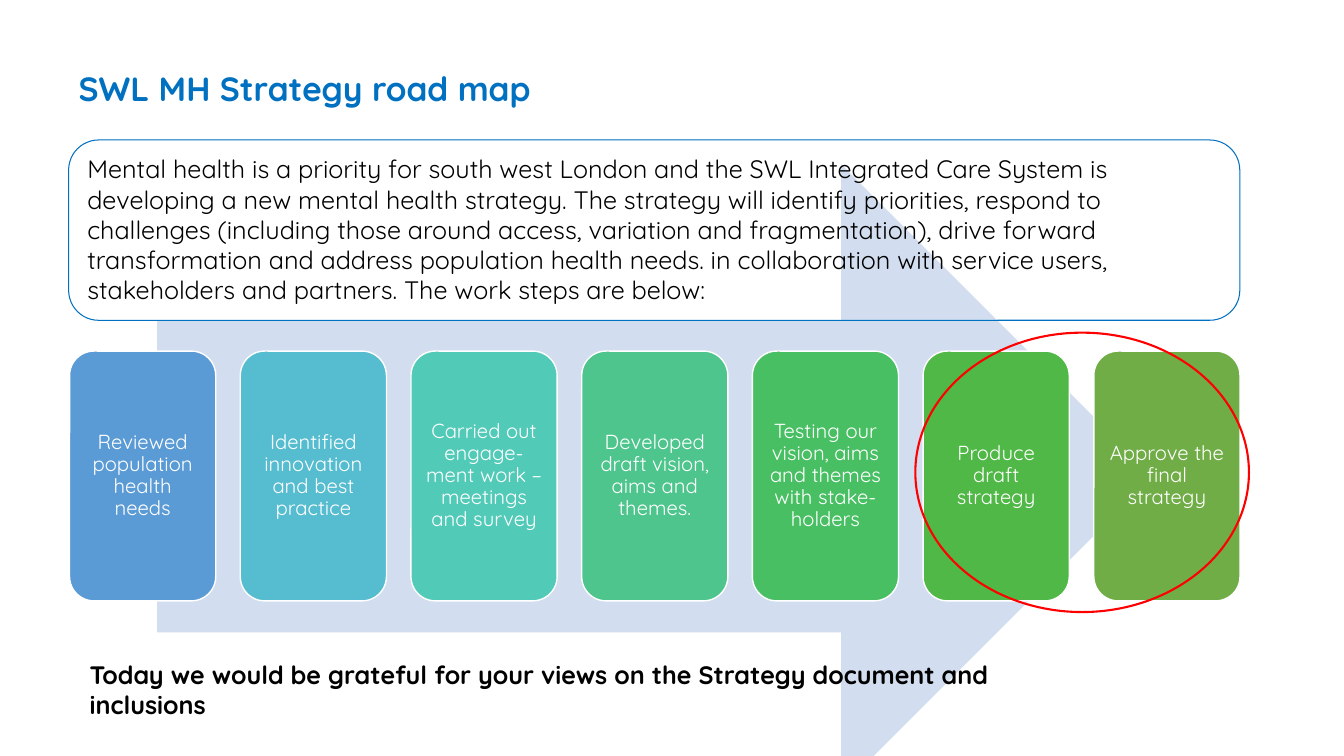
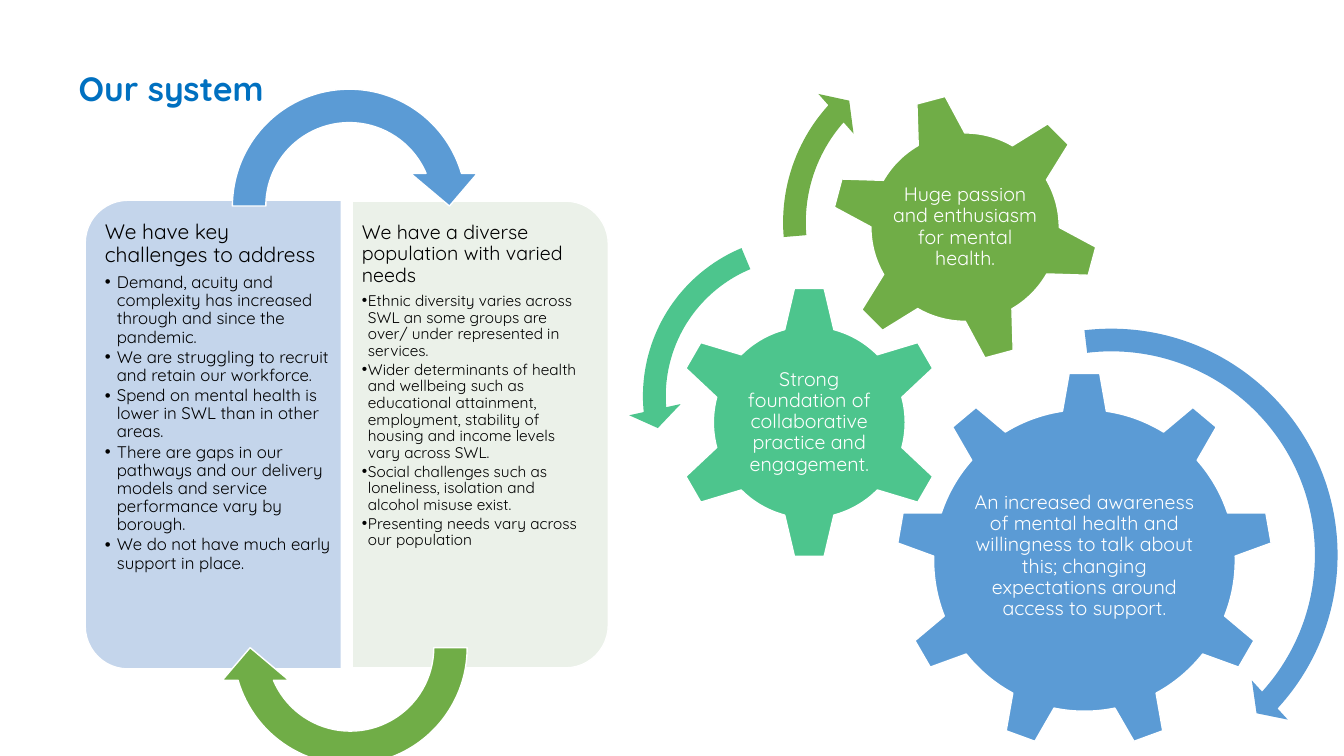
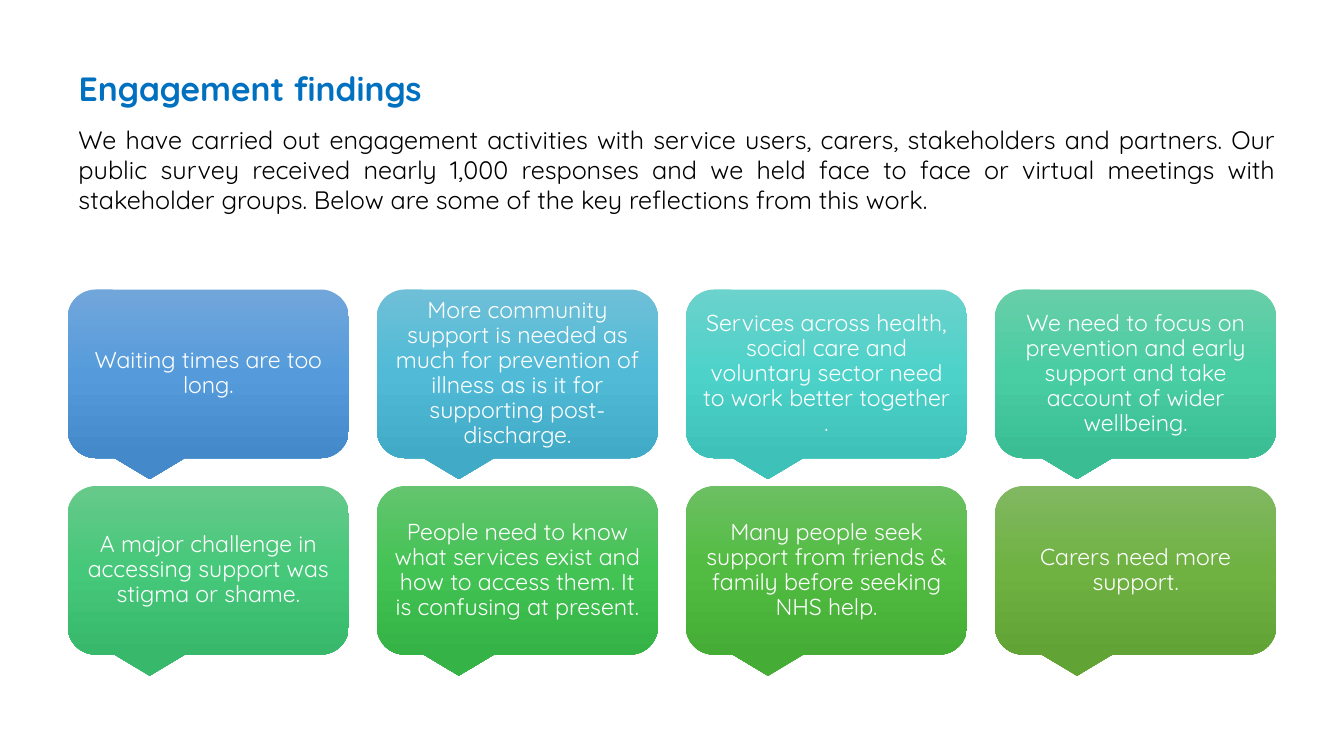
from copy import deepcopy

from lxml.etree import SubElement
from pptx import Presentation
from pptx.dml.color import RGBColor as RGB
from pptx.enum.shapes import MSO_SHAPE as Kind
from pptx.enum.text import MSO_ANCHOR as Anchor, MSO_AUTO_SIZE as Auto, PP_ALIGN as Align
from pptx.oxml.ns import qn
from pptx.util import Pt

FONT = "Quicksand"
BLACK = RGB(0, 0, 0)
WHITE = RGB(255, 255, 255)
RED = RGB(255, 0, 0)
NAVY = RGB(0x00, 0x70, 0xC0)
BLUE = RGB(0x5B, 0x9B, 0xD5)
MINT = RGB(0x4D, 0xC5, 0x8D)
GREEN = RGB(0x70, 0xAD, 0x47)
PALE = RGB(0xD2, 0xDE, 0xEF)
SKY = RGB(0xC4, 0xD5, 0xEB)
SAGE = RGB(0xEB, 0xF1, 0xE9)

STEPS = [
    ("Reviewed population health needs", BLUE),
    ("Identified innovation and best practice", RGB(0x56, 0xBC, 0xD0)),
    ("Carried out engage-ment work – meetings and survey", RGB(0x52, 0xCA, 0xB8)),
    ("Developed draft vision, aims and themes.", MINT),
    ("Testing our vision, aims and themes with stake-holders", RGB(0x49, 0xBF, 0x64)),
    ("Produce draft strategy", RGB(0x50, 0xB8, 0x46)),
    ("Approve the final strategy", GREEN),
]
AIMS = (
    "Mental health is a priority for south west London and the SWL Integrated Care System is "
    "developing a new mental health strategy. The strategy will identify priorities, respond to "
    "challenges (including those around access, variation and fragmentation), drive forward "
    "transformation and address population health needs. in collaboration with service users, "
    "stakeholders and partners. The work steps are below:"
)
ISSUES = [
    "Demand, acuity and complexity has increased through and since the pandemic.",
    "We are struggling to recruit and retain our workforce.",
    "Spend on mental health is lower in SWL than in other areas.",
    "There are gaps in our pathways and our delivery models and service performance vary by borough.",
    "We do not have much early support in place.",
]
NEEDS = [
    "Ethnic diversity varies across SWL an some groups are over/ under represented in services.",
    "Wider determinants of health and wellbeing such as educational attainment, employment, "
    "stability of housing and income levels vary across SWL.",
    "Social challenges such as loneliness, isolation and alcohol misuse exist.",
    "Presenting needs vary across our population",
]
SURVEY = (
    "We have carried out engagement activities with service users, carers, stakeholders and "
    "partners. Our public survey received nearly 1,000 responses and we held face to face or "
    "virtual meetings with stakeholder groups. Below are some of the key reflections from this work."
)
VIEWS = [
    ("Waiting times are too long.", "71A6DB 559BDB 448ACA"),
    ("More community support is needed as much for prevention of illness as is it for "
     "supporting post-discharge.", "6EBFD7 51BBD7 41AAC6"),
    ("Services across health, social care and voluntary sector need to work better together .",
     "6BD2CC 4DD2CA 3DC1B9"),
    ("We need to focus on prevention and early support and take account of wider wellbeing.",
     "68CEAA 49CDA2 3ABD92"),
    ("A major challenge in accessing support was stigma or shame.", "66C98A 46C87A 37B86B"),
    ("People need to know what services exist and how to access them. It is confusing at present.",
     "64C46F 43C354 35B346"),
    ("Many people seek support from friends & family before seeking NHS help.",
     "6CBF62 51BC41 45AC35"),
    ("Carers need more support.", "81B861 6FB242 62A336"),
]


def points(box):
    return [Pt(n) for n in box]


def place(item, box):
    item.left, item.top, item.width, item.height = points(box)


def write(frame, text, size=18, color=BLACK, bold=False, align=Align.LEFT, anchor=Anchor.TOP,
          inset=(7.2, 3.6, 7.2, 3.6), lead=1.0, after=0, mark=None, hang=0):
    frame.word_wrap = True
    frame.auto_size = Auto.NONE
    frame.vertical_anchor = anchor
    (frame.margin_left, frame.margin_top,
     frame.margin_right, frame.margin_bottom) = points(inset)
    para = frame.add_paragraph() if frame.text else frame.paragraphs[0]
    if mark is not None:
        props = para._p.get_or_add_pPr()
        props.set("marL", str(Pt(hang)))
        props.set("indent", str(-Pt(hang)))
        if mark:
            para.level = 1
            SubElement(props, qn("a:buChar")).set("char", mark)
        else:
            SubElement(props, qn("a:buNone"))
    para.alignment = align
    para.line_spacing = lead
    para.space_before = Pt(0)
    para.space_after = Pt(after)
    run = para.add_run()
    run.text = text
    font = run.font
    font.name, font.size, font.bold = FONT, Pt(size), bold
    font.color.rgb = color


def center(frame, text, size, inset):
    write(frame, text, size=size, color=WHITE, align=Align.CENTER, anchor=Anchor.MIDDLE,
          inset=(inset,) * 4, lead=0.9)


def note(slide, box, text, **form):
    write(slide.shapes.add_textbox(*points(box)).text_frame, text, **form)


def draw(slide, kind, box, fill=None, line=None, width=1, turn=0, adjust=()):
    shape = slide.shapes.add_shape(kind, *points(box))
    shape.shadow.inherit = False
    shape.rotation = turn
    for i, value in enumerate(adjust):
        shape.adjustments[i] = value
    if fill is None:
        shape.fill.background()
    else:
        shape.fill.solid()
        shape.fill.fore_color.rgb = fill
    if line is None:
        shape.line.fill.background()
    else:
        shape.line.color.rgb = line
        shape.line.width = Pt(width)
    return shape


def start(deck, layout, title):
    slide = deck.slides.add_slide(deck.slide_layouts[layout])
    head = slide.shapes.title
    place(head, (49, 44.6, 663, 36))
    write(head.text_frame, title, size=24, color=NAVY, bold=True)
    return slide


def cards(slide, box):
    left, top, width, height = box
    wide = 104.4
    step = (width - wide) / (len(STEPS) - 1)
    for i, (text, fill) in enumerate(STEPS):
        card = draw(slide, Kind.ROUNDED_RECTANGLE, (left + i * step, top, wide, height), fill, WHITE)
        center(card.text_frame, text, 14.5, 4.3)


def shade(shape, tones):
    fill = shape.fill
    fill.gradient()
    fill.gradient_angle = 270
    stops = shape.element.spPr.find(".//" + qn("a:gsLst"))
    stops.insert(1, deepcopy(stops[0]))
    for stop, tone, spot in zip(fill.gradient_stops, tones.split(), (0, 0.5, 1)):
        stop.color.rgb = RGB.from_string(tone)
        stop.position = spot


def quotes(slide, box, cols=4, gap=20):
    left, top, width, height = box
    wide = (width - gap * (cols - 1)) / cols
    high = (height - gap) / 2
    for i, (text, tones) in enumerate(VIEWS):
        row, col = divmod(i, cols)
        spot = (left + col * (wide + gap), top + row * (high + gap), wide, high)
        quote = draw(slide, Kind.ROUNDED_RECTANGULAR_CALLOUT, spot)
        shade(quote, tones)
        center(quote.text_frame, text, 16.5, 5)


def panel(slide, body, box, fill, turn, shift, inset, head, items, size, hang):
    left, top, width, height = box
    spot = (left + (width - height) / 2, top + (height - width) / 2, height, width)
    draw(slide, Kind.ROUND_2_SAME_RECTANGLE, spot, fill, WHITE, turn=turn, adjust=(0.167, 0))
    place(body, (left + shift, top + 8.2, 173.5, height - 18))
    body.element.getparent().append(body.element)
    frame = body.text_frame
    write(frame, head, size=size + 3, inset=inset, lead=0.9, after=5, mark="")
    for item in items:
        write(frame, item, size=size, inset=inset, lead=0.9, after=1.5, mark="•", hang=hang)


def gear(slide, kind, left, top, size, fill, text, pad, lift=0, turn=0):
    draw(slide, kind, (left, top, size, size), fill, WHITE, turn=turn)
    side = size - 2 * pad
    box = slide.shapes.add_textbox(*points((left + pad, top + pad - lift, side, side)))
    center(box.text_frame, text, 14, 1.4)


def bend(slide, left, top, size, fill, adjust, kind=Kind.CIRCULAR_ARROW, **form):
    draw(slide, kind, (left, top, size, size), fill, adjust=adjust, **form)


def roadmap(deck):
    slide = start(deck, 5, "SWL MH Strategy road map")
    draw(slide, Kind.RIGHT_ARROW, (112.3, 117.4, 711.4, 445.7), PALE)
    cards(slide, (49.7, 250.8, 836, 178.4))
    intro = draw(slide, Kind.ROUNDED_RECTANGLE, (49, 100, 836.6, 128.8), line=NAVY, width=0.75)
    write(intro.text_frame, AIMS)
    draw(slide, Kind.OVAL, (653.8, 237.6, 238.3, 199.6), line=RED, width=1.5)
    note(slide, (57, 467.3, 701.3, 51),
         "Today we would be grateful for your views on the Strategy document and inclusions", bold=True)


def system(deck):
    slide = start(deck, 3, "Our system")
    first, second = list(slide.placeholders)[1:3]
    panel(slide, first, (60.9, 143, 182.9, 334.8), SKY, 270, 9.7, (4.3, 7.2, 6.5, 7.2),
          "We have key challenges to address", ISSUES, 12, 8.6)
    panel(slide, second, (251.6, 143.7, 182.9, 333.4), SAGE, 90, 0.4, (6.5, 7.2, 4.3, 7.2),
          "We have a diverse population with varied needs", NEEDS, 11, 4.3)
    loop = (0.125, 11.423, 204.577, 108, 0.125)
    bend(slide, 154.1, 51.8, 190.8, BLUE, loop, line=WHITE)
    bend(slide, 154.8, 367.2, 190.8, GREEN, loop, line=WHITE, turn=180)
    gear(slide, Kind.GEAR_9, 640, 265.7, 269.3, BLUE,
         "An increased awareness of mental health and willingness to talk about this; "
         "changing expectations around access to support.", 54, lift=3)
    gear(slide, Kind.GEAR_6, 480.2, 203.8, 195.8, MINT,
         "Strong foundation of collaborative practice and engagement.", 49.2)
    gear(slide, Kind.GEAR_6, 593.3, 66.2, 192.2, GREEN,
         "Huge passion and enthusiasm for mental health.", 42, turn=345)
    bend(slide, 621.4, 223.9, 344.9, BLUE, (0.047, 2.99, 25.5, 157.903, 0.055))
    bend(slide, 448.6, 157.7, 250.6, MINT, (0.065, 4.3, 104.891, 148.378, 0.075),
         kind=Kind.LEFT_CIRCULAR_ARROW)
    bend(slide, 548.6, 23.8, 270, GREEN, (0.06, 3.941, 133.138, 105.082, 0.07))


def findings(deck):
    slide = start(deck, 5, "Engagement findings")
    note(slide, (49, 85, 869, 72.7), SURVEY, align=Align.JUSTIFY)
    quotes(slide, (48.4, 206.8, 863.2, 260.8))


def main():
    deck = Presentation()
    deck.slide_width, deck.slide_height = Pt(960), Pt(540)
    for build in (roadmap, system, findings):
        build(deck)
    deck.save("out.pptx")


if __name__ == "__main__":
    main()
